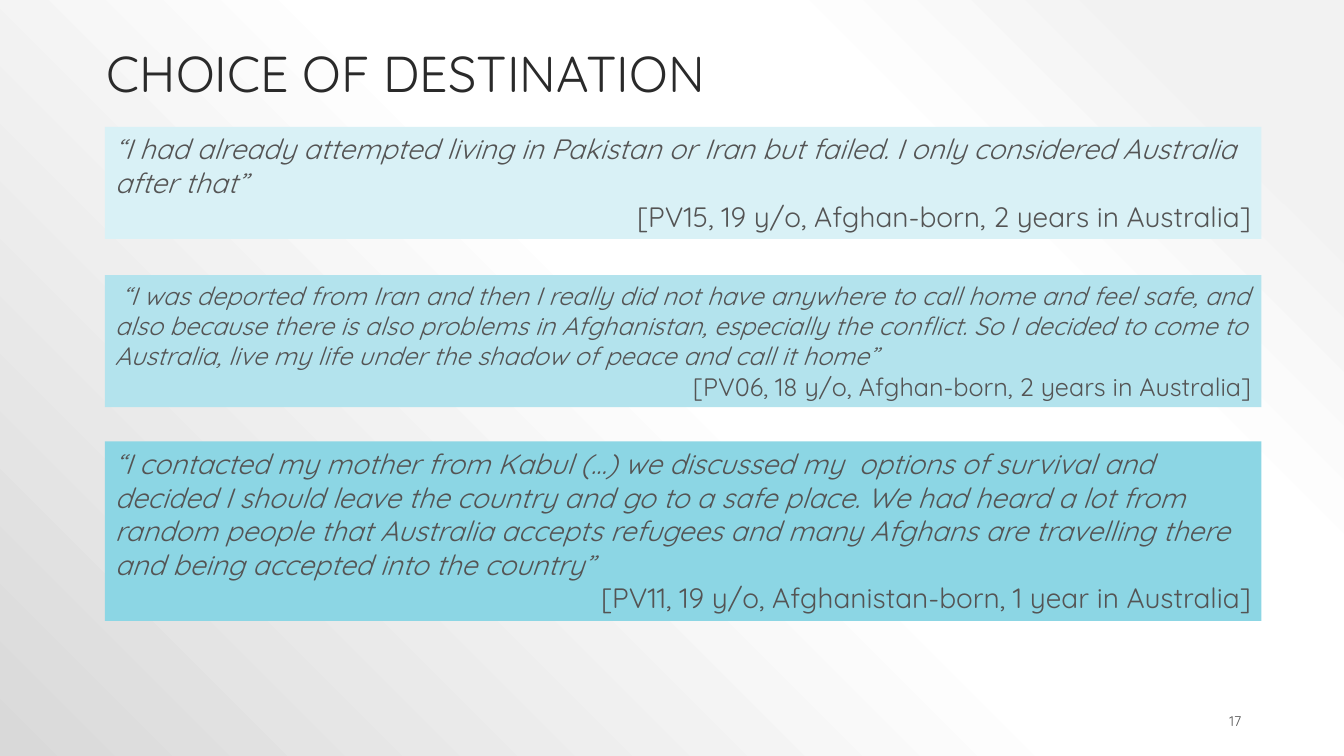
from pptx import Presentation
from pptx.dml.color import RGBColor
from pptx.enum.shapes import MSO_SHAPE
from pptx.enum.text import MSO_ANCHOR, MSO_AUTO_SIZE, PP_ALIGN
from pptx.oxml import parse_xml
from pptx.oxml.ns import nsdecls, qn
from pptx.util import Inches, Pt

TEXT_COLOR = "545454"
QUOTE_LEFT, QUOTE_WIDTH = Inches(1.04), Inches(11.47)
BACKGROUND_STOPS = [(10, "F2F2F2"), (28, "FFFFFF"), (48, "FFFFFF"), (100, "D9D9D9")]
# top, height, fill, text size, quote, speaker
QUOTES = [
    (1.26, 1.11, "D9F1F6", 20,
     "“I had already attempted living in Pakistan or Iran but failed. "
     "I only considered Australia after that”",
     "[PV15, 19 y/o, Afghan-born, 2 years in Australia]"),
    (2.73, 1.31, "B3E3ED", 18,
     " “I was deported from Iran and then I really did not have anywhere to call home "
     "and feel safe, and also because there is also problems in Afghanistan, especially "
     "the conflict. So I decided to come to Australia, live my life under the shadow of "
     "peace and call it home”",
     "[PV06, 18 y/o, Afghan-born, 2 years in Australia]"),
    (4.38, 1.78, "8CD6E4", 20,
     "“I contacted my mother from Kabul (…) we discussed my  options of survival and "
     "decided I should leave the country and go to a safe place. We had heard a lot from "
     "random people that Australia accepts refugees and many Afghans are travelling there "
     "and being accepted into the country”",
     "[PV11, 19 y/o, Afghanistan-born, 1 year in Australia]"),
]


def rgb(color):
    return RGBColor.from_string(color)


def write(paragraph, text, size, color=TEXT_COLOR, align=PP_ALIGN.LEFT, italic=False):
    paragraph.text = text
    paragraph.alignment = align
    paragraph.font.name = "Quicksand"
    paragraph.font.size = Pt(size)
    paragraph.font.italic = italic
    paragraph.font.color.rgb = rgb(color)


presentation = Presentation()
presentation.slide_width, presentation.slide_height = Inches(13.33), Inches(7.5)
slide = presentation.slides.add_slide(presentation.slide_layouts[5])

# Radial background, centred on the top right corner
slide.background.fill.solid()
background = slide.element.find(".//" + qn("p:bgPr"))
stops = "".join(
    f'<a:gs pos="{position * 1000}"><a:srgbClr val="{color}"/></a:gs>'
    for position, color in BACKGROUND_STOPS
)
gradient = parse_xml(
    f'<a:gradFill {nsdecls("a")} rotWithShape="1"><a:gsLst>{stops}</a:gsLst>'
    '<a:path path="circle"><a:fillToRect l="100000" b="100000"/></a:path></a:gradFill>'
)
background.replace(background.find(qn("a:solidFill")), gradient)

title = slide.shapes.title
title.left, title.top = Inches(0.96), Inches(0.24)
title.width, title.height = Inches(11.5), Inches(0.84)
title.text_frame.vertical_anchor = MSO_ANCHOR.BOTTOM
write(title.text_frame.paragraphs[0], "CHOICE OF DESTINATION", 36, "2A2A2A")
title.text_frame.paragraphs[0].line_spacing = 0.9

for top, height, fill, size, quote, speaker in QUOTES:
    panel = slide.shapes.add_shape(
        MSO_SHAPE.RECTANGLE, QUOTE_LEFT, Inches(top), QUOTE_WIDTH, Inches(height))
    panel.shadow.inherit = False
    panel.fill.solid()
    panel.fill.fore_color.rgb = rgb(fill)
    panel.line.fill.background()
    frame = panel.text_frame
    frame.word_wrap = True
    frame.auto_size = MSO_AUTO_SIZE.SHAPE_TO_FIT_TEXT
    frame.vertical_anchor = MSO_ANCHOR.TOP
    write(frame.paragraphs[0], quote, size, italic=True)
    write(frame.add_paragraph(), speaker, size, align=PP_ALIGN.RIGHT)

page_number = slide.shapes.add_textbox(Inches(8.83), Inches(6.95), Inches(3.58), Inches(0.4))
page_number.text_frame.word_wrap = True
page_number.text_frame.vertical_anchor = MSO_ANCHOR.MIDDLE
write(page_number.text_frame.paragraphs[0], "17", 10, align=PP_ALIGN.RIGHT)

presentation.save("out.pptx")
